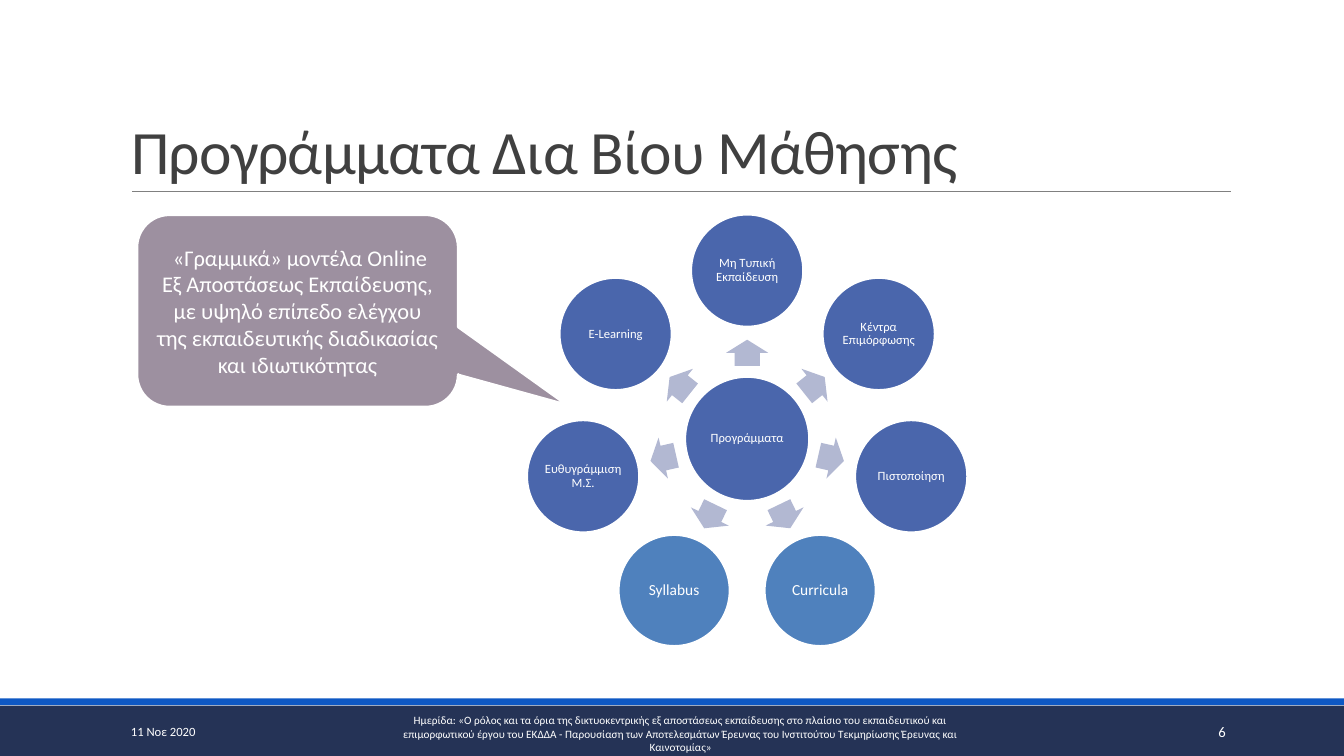
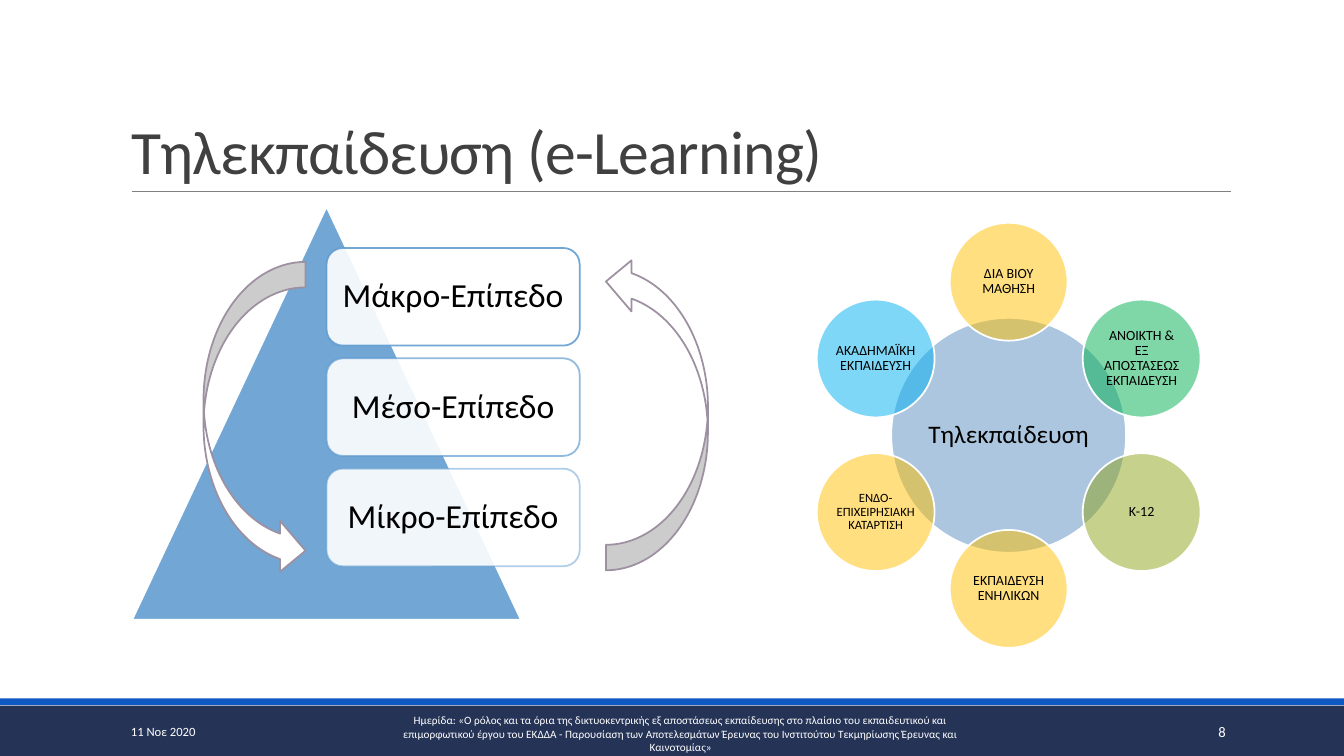
from math import cos, radians, sin

from lxml.etree import SubElement
from pptx import Presentation
from pptx.dml.color import RGBColor
from pptx.enum.shapes import MSO_CONNECTOR, MSO_SHAPE as Preset
from pptx.enum.text import MSO_ANCHOR as Anchor, MSO_AUTO_SIZE, PP_ALIGN as Align
from pptx.oxml.ns import qn
from pptx.util import Cm, Pt

FONT = "Calibri"
COLORS = {
    "white": "FFFFFF", "black": "000000", "title": "404040", "rule": "808080",
    "band": "253356", "strip": "0E58C4", "indigo": "4A66AC", "steel": "4F81BD",
    "arrow": "B2B8D2", "mauve": "9D90A0", "sky": "629DD1", "hub": "598EBE",
    "amber": "FFC000", "green": "00B050", "olive": "8EA41B", "cyan": "00B0F0",
}
DATE = "11 Νοε 2020"
FOOTER = (
    "Ημερίδα: «Ο ρόλος και τα όρια της δικτυοκεντρικής εξ αποστάσεως εκπαίδευσης "
    "στο πλαίσιο του εκπαιδευτικού και επιμορφωτικού έργου του ΕΚΔΔΑ - Παρουσίαση "
    "των Αποτελεσμάτων Έρευνας του Ινστιτούτου Τεκμηρίωσης Έρευνας και Καινοτομίας»"
)
PROGRAMMES = [
    ("Μη Τυπική Εκπαίδευση", "indigo", 9),
    ("Κέντρα Επιμόρφωσης", "indigo", 9),
    ("Πιστοποίηση", "indigo", 9),
    ("Curricula", "steel", 11),
    ("Syllabus", "steel", 11),
    ("Ευθυγράμμιση Μ.Σ.", "indigo", 9),
    ("E-Learning", "indigo", 9),
]
CALLOUT = (
    " «Γραμμικά» μοντέλα Online Εξ Αποστάσεως Εκπαίδευσης, με υψηλό επίπεδο "
    "ελέγχου της εκπαιδευτικής διαδικασίας και ιδιωτικότητας"
)
LEVELS = [("Μάκρο-Επίπεδο", 90), ("Μέσο-Επίπεδο", 70), ("Μίκρο-Επίπεδο", 50)]
FIELDS = [
    ("ΔΙΑ ΒΙΟΥ ΜΑΘΗΣΗ", "amber", 10),
    ("ΑΝΟΙΚΤΗ & ΕΞ ΑΠΟΣΤΑΣΕΩΣ ΕΚΠΑΙΔΕΥΣΗ", "green", 10),
    ("K-12", "olive", 10),
    ("ΕΚΠΑΙΔΕΥΣΗ ΕΝΗΛΙΚΩΝ", "amber", 10),
    ("ΕΝΔΟ-ΕΠΙΧΕΙΡΗΣΙΑΚΗ ΚΑΤΑΡΤΙΣΗ", "amber", 9),
    ("ΑΚΑΔΗΜΑΪΚΗ ΕΚΠΑΙΔΕΥΣΗ", "cyan", 10),
]


def rgb(name):
    return RGBColor.from_string(COLORS[name])


def set_opacity(shape, path, percent):
    """Set the opacity of the solid colour found under the shape's properties."""
    for color in shape.element.spPr.xpath(f"{path}a:solidFill/a:srgbClr"):
        SubElement(color, qn("a:alpha")).set("val", str(percent * 1000))


def write(shape, text, size, color="white", align=Align.CENTER,
          anchor=Anchor.MIDDLE, inset=None, spacing=None):
    """Fill a shape with one formatted paragraph; inset is (side, top) in cm."""
    frame = shape.text_frame
    frame.text = text
    frame.word_wrap = True
    frame.auto_size = MSO_AUTO_SIZE.NONE
    frame.vertical_anchor = anchor
    if inset:
        frame.margin_left = frame.margin_right = Cm(inset[0])
        frame.margin_top = frame.margin_bottom = Cm(inset[1])
    para = frame.paragraphs[0]
    para.alignment = align
    para.line_spacing = spacing
    for span in para.runs:
        span.font.name = FONT
        span.font.size = Pt(size)
        span.font.color.rgb = rgb(color)


def add_preset(page, preset, bounds, fill, line=None, width=1.25,
               opacity=100, line_opacity=100):
    shape = page.shapes.add_shape(preset, *map(Cm, bounds))
    shape.shadow.inherit = False
    shape.fill.solid()
    shape.fill.fore_color.rgb = rgb(fill)
    if line:
        shape.line.color.rgb = rgb(line)
        shape.line.width = Pt(width)
    else:
        shape.line.fill.background()
    if opacity < 100:
        set_opacity(shape, "./", opacity)
    if line_opacity < 100:
        set_opacity(shape, "./a:ln/", line_opacity)
    return shape


def add_label(page, bounds, text, size, align, anchor=Anchor.MIDDLE):
    box = page.shapes.add_textbox(*map(Cm, bounds))
    write(box, text, size, align=align, anchor=anchor)


def add_circle(page, center, diameter, text, size, fill, color="white",
               opacity=100, width=1.25):
    left, top = (middle - diameter / 2 for middle in center)
    circle = add_preset(page, Preset.OVAL, (left, top, diameter, diameter),
                        fill, "white", width, opacity)
    write(circle, text, size, color, inset=(0.03, 0.03), spacing=0.9)


def around(center, radius, count):
    """Yield (angle, point) for equal steps clockwise from the top."""
    for step in range(count):
        angle = 360 * step / count
        turn = radians(angle)
        yield angle, (center[0] + radius * sin(turn), center[1] - radius * cos(turn))


def add_page(deck, title_text, number):
    """Add a slide with the shared bands, rule, title and footer."""
    page = deck.slides.add_slide(deck.slide_layouts[5])
    add_preset(page, Preset.RECTANGLE, (0, 17.78, 33.87, 1.27), "band")
    add_preset(page, Preset.RECTANGLE, (0, 17.6, 33.87, 0.17), "strip")

    rule = page.shapes.add_connector(
        MSO_CONNECTOR.STRAIGHT, Cm(3.33), Cm(4.83), Cm(31.01), Cm(4.83))
    rule.line.color.rgb = rgb("rule")
    rule.line.width = Pt(0.5)
    SubElement(rule.element.spPr, qn("a:effectLst"))

    title = page.shapes.title
    title.left, title.top, title.width, title.height = map(Cm, (3.05, 0.79, 27.94, 4.04))
    write(title, title_text, 44, "title", Align.LEFT, Anchor.BOTTOM, spacing=0.85)
    title.text_frame.paragraphs[0].runs[0].font._element.set("spc", "-50")

    add_label(page, (9.75, 17.86, 14.81, 1.27), FOOTER, 8, Align.CENTER, Anchor.TOP)
    add_label(page, (3.05, 17.93, 6.86, 1.02), DATE, 9, Align.LEFT)
    add_label(page, (27.51, 17.93, 3.63, 1.02), str(number), 10.5, Align.RIGHT)
    return page


def add_programmes(page):
    center, count = (18.83, 11.06), len(PROGRAMMES)
    add_circle(page, center, 3.12, "Προγράμματα", 9, "indigo")
    for angle, (x, y) in around(center, 2.17, count):
        arrow = add_preset(page, Preset.RIGHT_ARROW,
                           (x - 0.33, y - 0.53, 0.66, 1.06), "arrow")
        arrow.adjustments[0] = 0.6
        arrow.rotation = (angle - 90) % 360
    for (angle, point), (text, fill, size) in zip(around(center, 4.24, count), PROGRAMMES):
        add_circle(page, point, 2.82, text, size, fill,
                   width=2 if fill == "steel" else 1.25)


def add_callout(page):
    callout = add_preset(page, Preset.ROUNDED_RECTANGULAR_CALLOUT,
                         (3.45, 5.41, 8.1, 4.85), "mauve", "white", 2)
    for index, value in enumerate((0.84, 0.49, 0.17)):
        callout.adjustments[index] = value
    write(callout, CALLOUT, 16)


def add_levels(page):
    add_preset(page, Preset.ISOSCELES_TRIANGLE, (3.33, 5.21, 9.8, 10.41),
               "sky", "white", opacity=90)
    for row, (text, line_opacity) in enumerate(LEVELS):
        level = add_preset(page, Preset.ROUNDED_RECTANGLE,
                           (8.23, 6.25 + 2.78 * row, 6.38, 2.46), "white", "sky",
                           opacity=90, line_opacity=line_opacity)
        write(level, text, 24, "black", inset=(0.25, 0.25), spacing=0.9)
    for left, top, rotation in ((5.13, 6.6, 0), (15.27, 6.45, 180)):
        arrow = add_preset(page, Preset.CURVED_RIGHT_ARROW,
                           (left, top, 2.57, 7.92), "white", "mauve")
        arrow.rotation = rotation


def add_fields(page):
    center = (25.42, 10.97)
    add_circle(page, center, 5.92, "Τηλεκπαίδευση", 18, "hub", "black", 50)
    for (angle, point), (text, fill, size) in zip(around(center, 3.87, len(FIELDS)), FIELDS):
        add_circle(page, point, 2.97, text, size, fill, "black", 50)


def main():
    deck = Presentation()
    deck.slide_width, deck.slide_height = Cm(33.87), Cm(19.05)

    page = add_page(deck, "Προγράμματα Δια Βίου Μάθησης", 6)
    add_programmes(page)
    add_callout(page)

    page = add_page(deck, "Τηλεκπαίδευση (e-Learning)", 8)
    add_levels(page)
    add_fields(page)

    deck.save("out.pptx")


if __name__ == "__main__":
    main()
